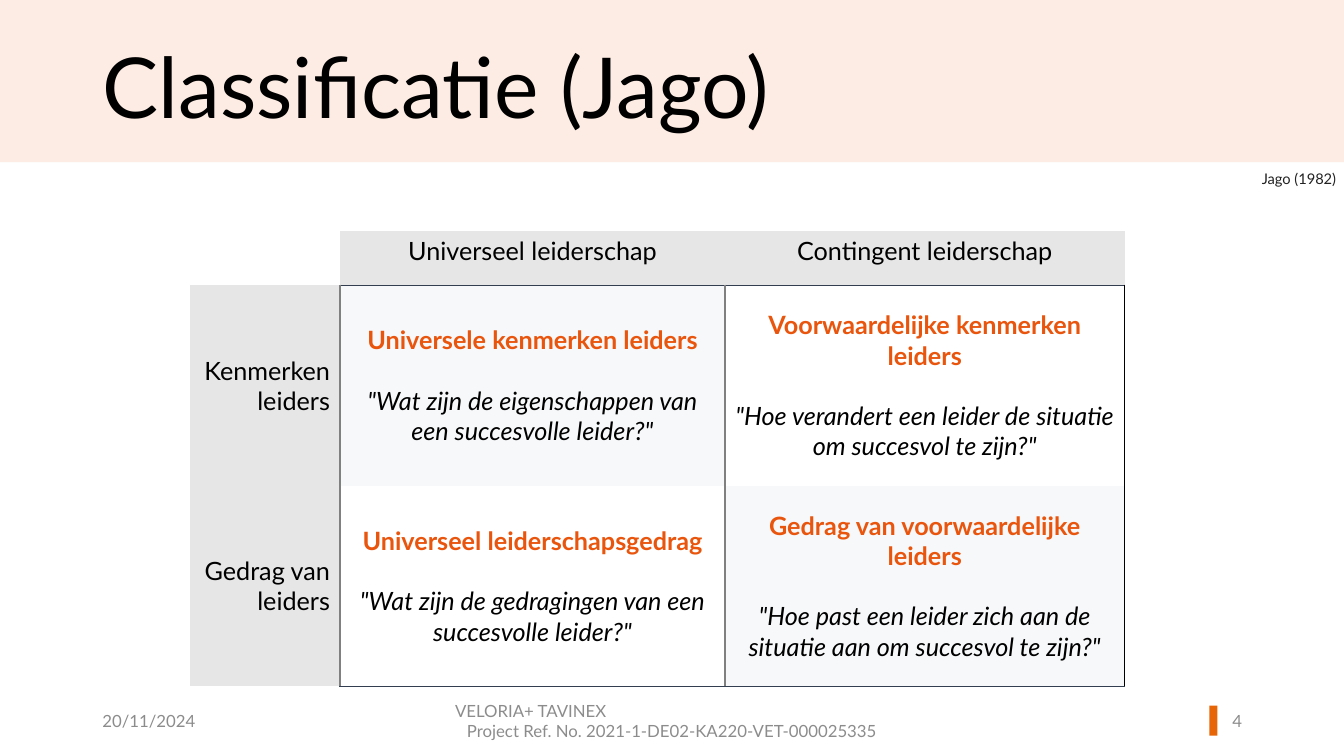
from lxml.etree import SubElement
from pptx import Presentation
from pptx.dml.color import RGBColor
from pptx.enum.shapes import MSO_SHAPE
from pptx.enum.text import MSO_ANCHOR, PP_ALIGN
from pptx.oxml.ns import qn
from pptx.util import Cm, Pt

LEFT, MID, RIGHT = PP_ALIGN.LEFT, PP_ALIGN.CENTER, PP_ALIGN.RIGHT
PLAIN = "{2D5ABB26-0587-4C30-8999-92F81FD0307C}"


def color(code):
    return RGBColor.from_string(code)


def style(para, size, code, align=LEFT, bold=False, italic=False):
    para.alignment = align
    for run in para.runs:
        font = run.font
        font.name, font.size = "Lato", Pt(size)
        font.bold, font.italic = bold, italic
        font.color.rgb = color(code)


deck = Presentation()
deck.slide_width, deck.slide_height = Cm(33.87), Cm(19.05)
slide = deck.slides.add_slide(deck.slide_layouts[5])
shapes = slide.shapes

# Title band and page marker, behind everything else
bars = [
    (0, 0, 33.87, 4.09, "FDECE3"),
    (30.48, 17.78, 0.2, 0.76, "E86507"),
]
for place, (x, y, w, h, code) in enumerate(bars, 2):
    bar = shapes.add_shape(MSO_SHAPE.RECTANGLE, Cm(x), Cm(y), Cm(w), Cm(h))
    bar.shadow.inherit = False
    bar.fill.solid()
    bar.fill.fore_color.rgb = color(code)
    bar.line.fill.background()
    shapes._spTree.insert(place, bar._element)

title = shapes.title
title.left, title.top = Cm(2.33), Cm(1.04)
title.width, title.height = Cm(25.2), Cm(2.16)
frame = title.text_frame
frame.text = "Classificatie (Jago)"
frame.vertical_anchor = MSO_ANCHOR.TOP
frame.paragraphs[0].line_spacing = 0.9
style(frame.paragraphs[0], 60, "000000")

# Table: each body cell holds a heading and a question
rows = [
    ["", "Universeel leiderschap", "Contingent leiderschap"],
    [
        "Kenmerken leiders",
        'Universele kenmerken leiders\n"Wat zijn de eigenschappen van een succesvolle leider?"',
        'Voorwaardelijke kenmerken leiders\n"Hoe verandert een leider de situatie om succesvol te zijn?"',
    ],
    [
        "Gedrag van leiders",
        'Universeel leiderschapsgedrag\n"Wat zijn de gedragingen van een succesvolle leider?"',
        'Gedrag van voorwaardelijke leiders\n"Hoe past een leider zich aan de situatie aan om succesvol te zijn?"',
    ],
]
grid = shapes.add_table(3, 3, Cm(4.78), Cm(5.82), Cm(23.56), Cm(11.47)).table
grid._tbl.tblPr.find(qn("a:tableStyleId")).text = PLAIN
grid.first_row = grid.horz_banding = False
for col, width in zip(grid.columns, (3.79, 9.7, 10.07)):
    col.width = Cm(width)
for row, height in zip(grid.rows, (1.37, 5.05, 5.05)):
    row.height = Cm(height)

for r, texts in enumerate(rows):
    for c, text in enumerate(texts):
        cell = grid.cell(r, c)
        edges = {}
        if r and c:
            edges["L"] = "808080"
            edges["R"] = "808080" if c == 1 else "000000"
            edges["T" if r == 1 else "B"] = "333F50"
        elif r:
            edges["R"] = "808080"
        elif c:
            edges["B"] = "333F50"
        props = cell._tc.get_or_add_tcPr()
        for side in "LRTB":
            line = SubElement(props, qn(f"a:ln{side}"), w=str(Pt(1)))
            if side in edges:
                fill = SubElement(line, qn("a:solidFill"))
                SubElement(fill, qn("a:srgbClr"), val=edges[side])
            else:
                SubElement(line, qn("a:noFill"))
        if not text:
            continue
        cell.fill.solid()
        shade = "F7F8FA" if r == c else "FFFFFF"
        cell.fill.fore_color.rgb = color(shade if r and c else "E7E6E6")
        cell.vertical_anchor = MSO_ANCHOR.MIDDLE if r else MSO_ANCHOR.TOP
        cell.text_frame.text = text
        paras = cell.text_frame.paragraphs
        if r and c:
            style(paras[0], 18, "E9550D", MID, bold=True)
            style(paras[1], 18, "000000", MID, italic=True)
            paras[1].space_before = Pt(21.6)
        else:
            style(paras[0], 18, "000000", MID if c else RIGHT)

# Source note, date, project and page number
project = "VELORIA+ TAVINEX\nProject Ref. No. 2021-1-DE02-KA220-VET-000025335"
notes = [
    ("Jago (1982)", 31.55, 4.15, 2.69, 0.71, 10.5, "222222", [LEFT]),
    ("20/11/2024", 2.33, 17.65, 7.62, 1.02, 12, "8C8C8C", [LEFT]),
    (project, 11.22, 17.65, 11.43, 1.02, 12, "8C8C8C", [LEFT, MID]),
    ("4", 29.9, 17.65, 1.65, 1.02, 12, "8C8C8C", [RIGHT]),
]
for text, x, y, w, h, size, code, aligns in notes:
    frame = shapes.add_textbox(Cm(x), Cm(y), Cm(w), Cm(h)).text_frame
    frame.word_wrap = True
    frame.vertical_anchor = MSO_ANCHOR.MIDDLE
    frame.text = text
    for para, align in zip(frame.paragraphs, aligns):
        style(para, size, code, align)

deck.save("out.pptx")
